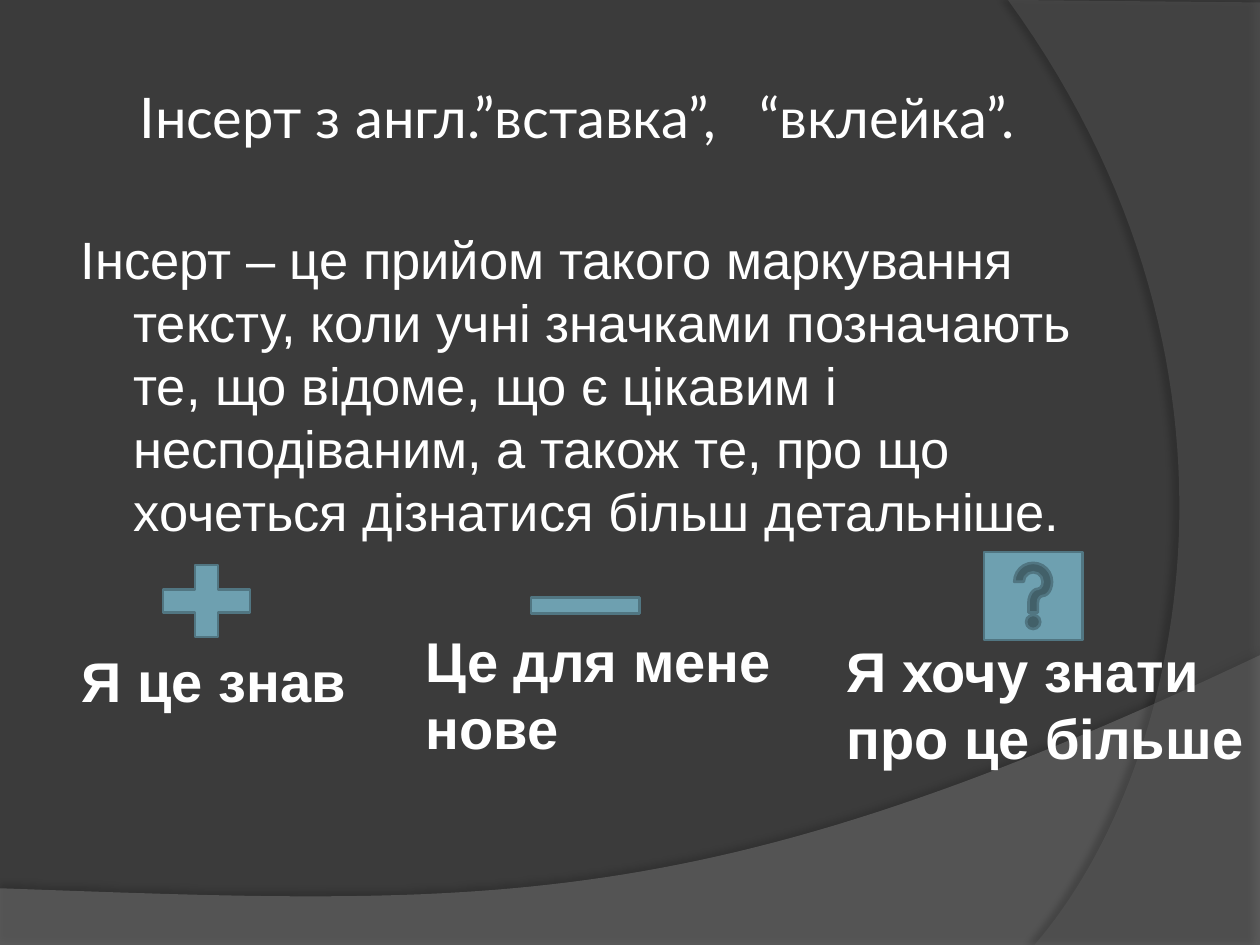
from lxml import etree
from pptx import Presentation
from pptx.dml.color import RGBColor
from pptx.enum.shapes import MSO_SHAPE
from pptx.enum.text import MSO_ANCHOR, MSO_AUTO_SIZE, PP_ALIGN
from pptx.oxml.ns import qn
from pptx.util import Inches, Pt

PLUS, MINUS, HELP = MSO_SHAPE.MATH_PLUS, MSO_SHAPE.MATH_MINUS, MSO_SHAPE.ACTION_BUTTON_HELP
MIDDLE, TOP = MSO_ANCHOR.MIDDLE, MSO_ANCHOR.TOP
CENTER, LEFT = PP_ALIGN.CENTER, PP_ALIGN.LEFT
NO_FIT, GROW = MSO_AUTO_SIZE.NONE, MSO_AUTO_SIZE.SHAPE_TO_FIT_TEXT

BACKGROUND = RGBColor(0x3B, 0x3B, 0x3B)
WHITE = RGBColor(0xFF, 0xFF, 0xFF)
BOTTOM_GRAY = RGBColor(0x7F, 0x7F, 0x7F)
SIDE_GRAY = RGBColor(0x5E, 0x5E, 0x5E)
MARK_FILL = RGBColor(0x6E, 0xA0, 0xB0)
MARK_LINE = RGBColor(0x51, 0x76, 0x82)

TITLE = "Інсерт з англ.”вставка”,   “вклейка”."
DEFINITION = (
    "Інсерт – це прийом такого маркування тексту, коли учні значками позначають "
    "те, що відоме, що є цікавим і несподіваним, а також те, про що хочеться "
    "дізнатися більш детальніше."
)
LABELS = [
    (["Я це знав"], (0.55, 5.08, 2.32, 0.64)),
    (["Я хочу знати", "про це більше"], (6.62, 5, 3.38, 1.18)),
    (["Це для мене", "нове"], (3.28, 4.92, 2.97, 1.18)),
]
MARKS = [
    (PLUS, (1.17, 4.38, 0.94, 0.78)),
    (MINUS, (4.06, 4.53, 1.17, 0.55)),
    (HELP, (7.81, 4.38, 0.78, 0.7)),
]
WAVES = [
    {"corners": [(0, 7.05), (0, 7.51), (10, 7.51)],
     "curve": [(10, 5.2), (5.59, 7.29), (3.91, 7.19), (0, 7.05)],
     "color": BOTTOM_GRAY, "opacity": 45,
     "shadow": {"opacity": 35, "blur": 4, "distance": 3.5, "angle": 270}},
    {"corners": [(10, 0.02), (10, 7.5)],
     "curve": [(8.21, 7.5), (9.35, 6.19), (10.18, 3), (8, 0)],
     "color": SIDE_GRAY, "opacity": 40,
     "shadow": {"opacity": 45, "blur": 4, "distance": 4, "angle": 180}},
]
CURVE_STEPS = 60


def bezier_points(curve):
    for step in range(CURVE_STEPS + 1):
        t = step / CURVE_STEPS
        weights = ((1 - t) ** 3, 3 * t * (1 - t) ** 2, 3 * t * t * (1 - t), t ** 3)
        yield tuple(sum(w * point[axis] for w, point in zip(weights, curve)) for axis in (0, 1))


def set_opacity(color_element, percent):
    etree.SubElement(color_element, qn("a:alpha"), val=str(percent * 1000))


def add_wave(slide, wave):
    points = wave["corners"] + list(bezier_points(wave["curve"]))
    start, *rest = [(Inches(x), Inches(y)) for x, y in points]
    builder = slide.shapes.build_freeform(*start)
    builder.add_line_segments(rest, close=True)
    shape = builder.convert_to_shape()
    shape.fill.solid()
    shape.fill.fore_color.rgb = wave["color"]
    shape.line.fill.background()
    shape.shadow.inherit = False
    properties = shape.element.spPr
    set_opacity(properties.find(qn("a:solidFill")).find(qn("a:srgbClr")), wave["opacity"])
    shadow = wave["shadow"]
    outer = etree.SubElement(
        properties.find(qn("a:effectLst")), qn("a:outerShdw"),
        blurRad=str(Pt(shadow["blur"])), dist=str(Pt(shadow["distance"])),
        dir=str(shadow["angle"] * 60000), algn="ctr", rotWithShape="0")
    set_opacity(etree.SubElement(outer, qn("a:srgbClr"), val="000000"), shadow["opacity"])


def place(shape, box):
    shape.left, shape.top, shape.width, shape.height = map(Inches, box)


def write(shape, lines, size, font="Arial", bold=False, align=LEFT,
          anchor=TOP, wrap=True, fit=NO_FIT):
    frame = shape.text_frame
    frame.text = "\n".join(lines)
    frame.word_wrap = wrap
    frame.auto_size = fit
    frame.vertical_anchor = anchor
    for paragraph in frame.paragraphs:
        paragraph.alignment = align
        paragraph.font.name = font
        paragraph.font.size = Pt(size)
        paragraph.font.bold = bold
        paragraph.font.color.rgb = WHITE
    return frame


def main():
    presentation = Presentation()
    presentation.slide_width, presentation.slide_height = Inches(10), Inches(7.5)
    slide = presentation.slides.add_slide(presentation.slide_layouts[1])
    slide.background.fill.solid()
    slide.background.fill.fore_color.rgb = BACKGROUND
    title, body = slide.placeholders

    for wave in WAVES:
        add_wave(slide, wave)
    for placeholder in (title, body):
        slide.shapes.element.append(placeholder.element)

    place(title, (0.5, 0.3, 8.17, 1.25))
    frame = write(title, [TITLE], 32, font="Lato", align=CENTER, anchor=MIDDLE)
    frame.margin_left = frame.margin_right = Inches(0.05)

    place(body, (0.5, 1.75, 8.17, 4.95))
    paragraph = write(body, [DEFINITION], 30).paragraphs[0]
    paragraph.space_before = Pt(6)
    properties = paragraph._p.get_or_add_pPr()
    properties.set("marL", str(Inches(0.46)))
    properties.set("indent", str(Inches(-0.42)))
    properties.find(qn("a:spcBef")).addnext(etree.Element(qn("a:buNone")))

    for lines, box in LABELS:
        label = slide.shapes.add_textbox(*map(Inches, box))
        write(label, lines, 32, bold=True, wrap=False, fit=GROW)

    for kind, box in MARKS:
        mark = slide.shapes.add_shape(kind, *map(Inches, box))
        mark.shadow.inherit = False
        mark.fill.solid()
        mark.fill.fore_color.rgb = MARK_FILL
        mark.line.color.rgb = MARK_LINE
        mark.line.width = Pt(1.5)

    presentation.save("out.pptx")


if __name__ == "__main__":
    main()
